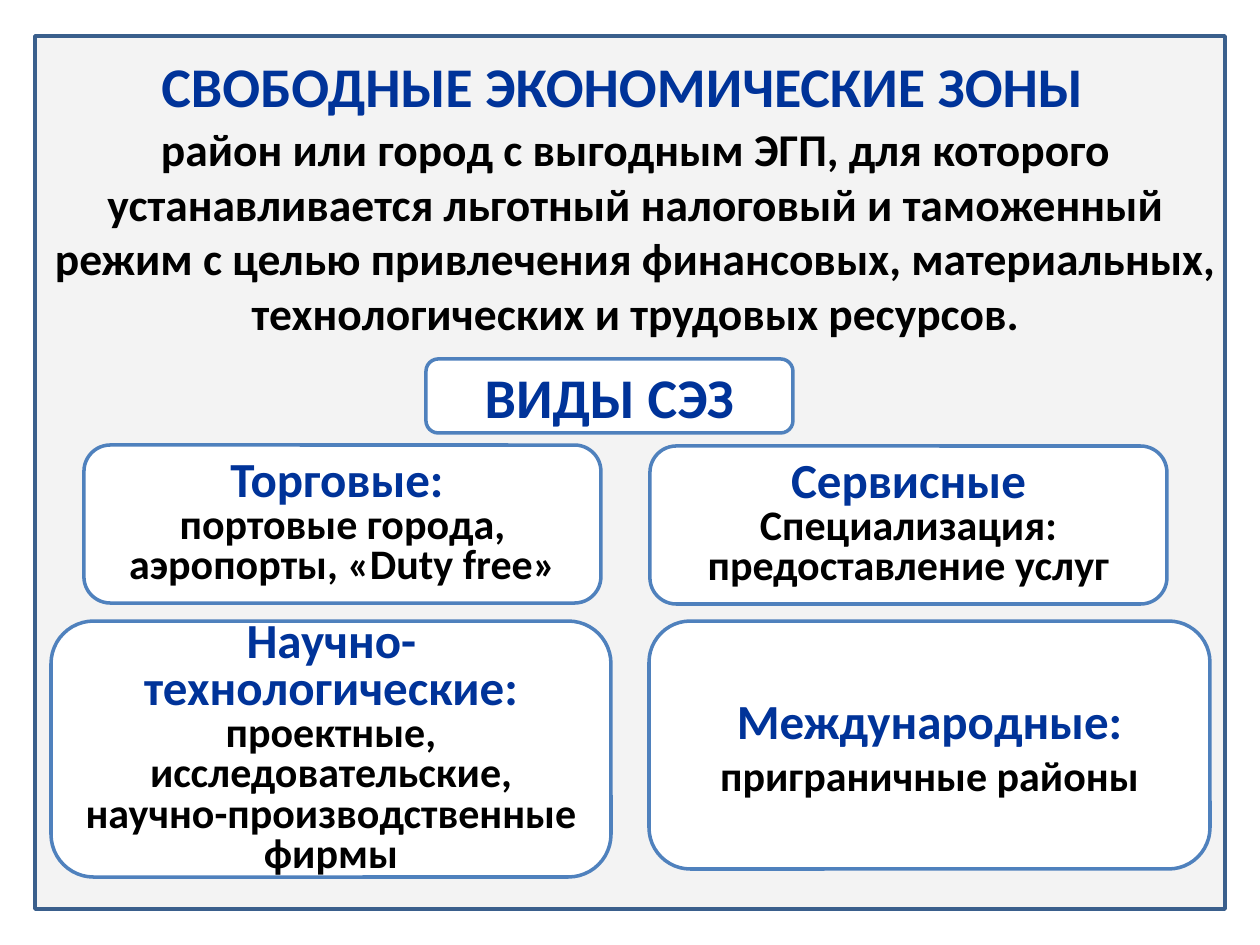
import pptx
import pptx.dml.color
import pptx.enum.shapes
import pptx.enum.text
import pptx.oxml
import pptx.oxml.ns
import pptx.util

SCALE = 914400 / 126
FONT = "Calibri"
COLORS = {"panel": "F2F2F2", "frame": "3A5F8C", "card": "FFFFFF",
          "border": "4F81BD", "heading": "003399", "body": "000000"}
SHAPES = pptx.enum.shapes.MSO_SHAPE
MIDDLE = pptx.enum.text.MSO_ANCHOR.MIDDLE
TOP = pptx.enum.text.MSO_ANCHOR.TOP


def px(*lengths):
    """Turn px lengths into EMU."""
    return [pptx.util.Emu(round(n * SCALE)) for n in lengths]


def rgb(name):
    """Look up a named colour."""
    return pptx.dml.color.RGBColor.from_string(COLORS[name])


def style_font(font, size, color):
    """Give a font its size and colour in bold."""
    font.name = FONT
    font.size = pptx.util.Pt(size)
    font.bold = True
    font.color.rgb = rgb(color)


def write(tf, paragraphs, anchor=MIDDLE, spacing=1.0):
    """Write centred paragraphs, each a list of (text, size, colour) runs."""
    tf.word_wrap = True
    tf.vertical_anchor = anchor
    for i, runs in enumerate(paragraphs):
        p = tf.paragraphs[0] if i == 0 else tf.add_paragraph()
        p.alignment = pptx.enum.text.PP_ALIGN.CENTER
        p.line_spacing = spacing
        for text, size, color in runs:
            r = p.add_run()
            r.text = text
            if len(runs) > 1:
                style_font(r.font, size, color)
        if len(runs) == 1:
            style_font(p.font, *runs[0][1:])


def add_box(s, kind, box, fill, line):
    """Add a filled and outlined shape without a shadow."""
    sp = s.shapes.add_shape(kind, *px(*box))
    sp.shadow.inherit = False
    sp.fill.solid()
    sp.fill.fore_color.rgb = rgb(fill)
    sp.line.color.rgb = rgb(line)
    sp.line.width = pptx.util.Pt(2)
    return sp


def add_panel(s, box):
    """Add the slightly transparent panel behind the content."""
    sp = add_box(s, SHAPES.RECTANGLE, box, "panel", "frame")
    color = sp.fill._xPr.find(".//" + pptx.oxml.ns.qn("a:srgbClr"))
    pptx.oxml.xmlchemy.OxmlElement("a:alpha")
    alpha = pptx.oxml.xmlchemy.OxmlElement("a:alpha")
    alpha.set("val", "90000")
    color.append(alpha)


def add_definition(s, box):
    """Add the title and the definition below it."""
    x, y, w, h = box
    title = s.shapes.add_textbox(*px(x + 23, y, w - 60, 97))
    write(title.text_frame,
          [[("СВОБОДНЫЕ ЭКОНОМИЧЕСКИЕ ЗОНЫ ", 32, "heading")]], spacing=0.7)
    body = s.shapes.add_textbox(*px(x, y + 70, w, h - 70))
    write(body.text_frame, [[(
        "район или город с выгодным ЭГП, для которого устанавливается "
        "льготный налоговый и таможенный режим с целью привлечения "
        "финансовых, материальных, технологических и трудовых ресурсов.",
        26, "body")]], anchor=TOP)


def add_card(s, box, paragraphs, spacing=0.8):
    """Add a rounded card with its text."""
    sp = add_box(s, SHAPES.ROUNDED_RECTANGLE, box, "card", "border")
    write(sp.text_frame, paragraphs, spacing=spacing)


def add_zone_types(s, box):
    """Add the heading card and the four cards of zone types."""
    x, y, w, h = box
    add_card(s, (x + 375, y, 367, 74), [[("ВИДЫ СЭЗ", 32, "heading")]], 1.0)
    add_card(s, (x + 33, y + 86, 517, 158), [
        [("Торговые: ", 28, "heading")],
        [("портовые города, аэропорты, «Duty free»", 24, "body")]])
    add_card(s, (x + w - 561, y + 87, 517, 158), [
        [("Сервисные", 28, "heading"), (" ", 24, "heading"),
         ("Специализация: предоставление услуг", 24, "body")]])
    add_card(s, (x, y + 262, 560, h - 262), [
        [("Научно-технологические:", 28, "heading")],
        [("проектные, исследовательские, научно-производственные фирмы",
          24, "body")]])
    add_card(s, (x + w - 562, y + 262, 561, h - 270), [
        [("Международные: ", 28, "heading"),
         ("приграничные районы", 24, "body")]], 1.0)


def main():
    """Build the slide on free economic zones."""
    prs = pptx.Presentation()
    prs.slide_width, prs.slide_height = px(1260, 945)
    s = prs.slides.add_slide(prs.slide_layouts[6])
    add_panel(s, (35, 36, 1190, 873))
    add_definition(s, (39, 45, 1194, 303))
    add_zone_types(s, (51, 359, 1160, 518))
    prs.save("out.pptx")


if __name__ == "__main__":
    main()
